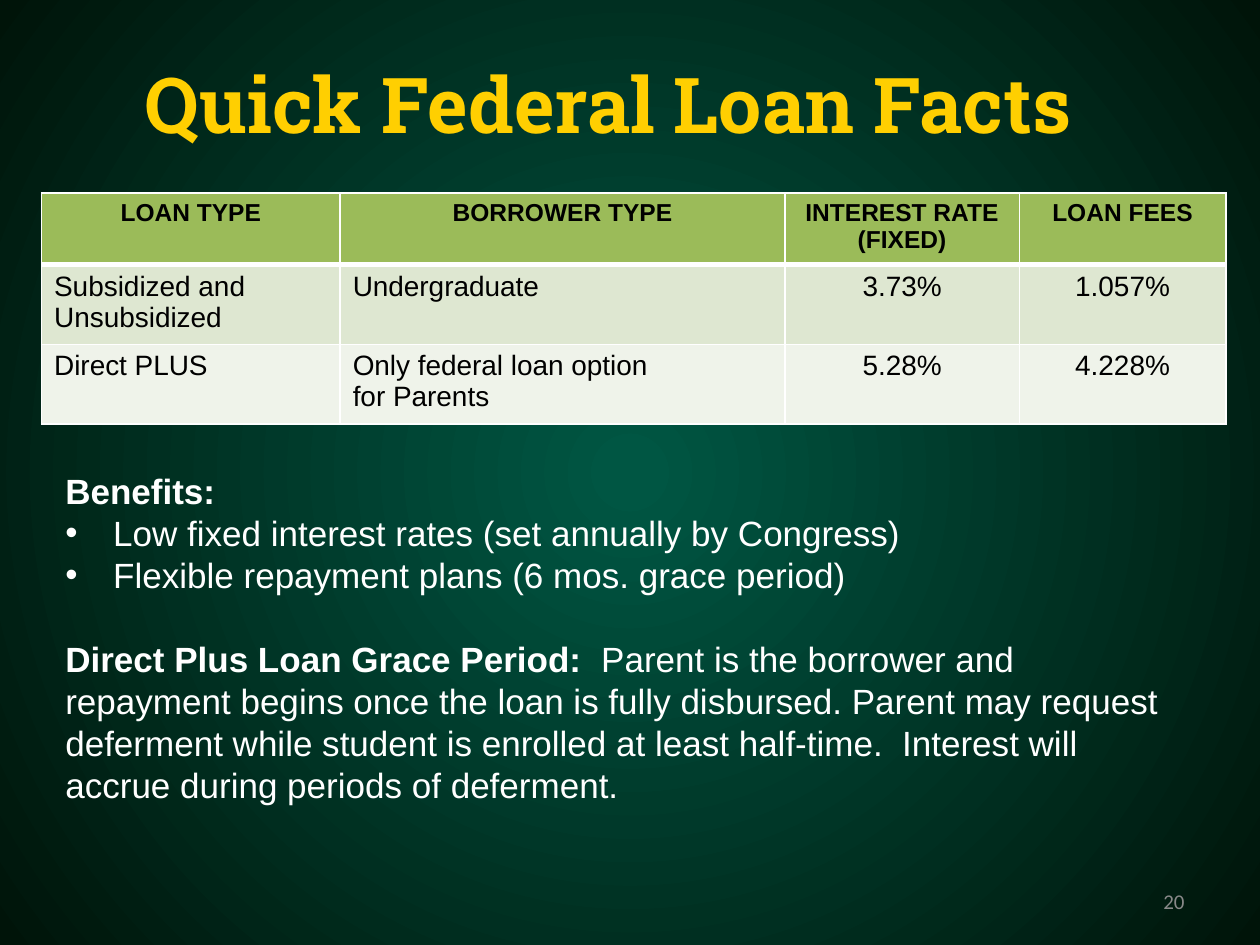
from dataclasses import dataclass

from lxml import etree
from pptx import Presentation
from pptx.dml.color import RGBColor
from pptx.enum.text import MSO_ANCHOR, PP_ALIGN
from pptx.oxml.ns import qn
from pptx.util import Inches, Pt

LEFT, CENTER, RIGHT = PP_ALIGN.LEFT, PP_ALIGN.CENTER, PP_ALIGN.RIGHT
TOP, MIDDLE = MSO_ANCHOR.TOP, MSO_ANCHOR.MIDDLE

GOLD = RGBColor(0xFF, 0xCF, 0x01)
WHITE = RGBColor(0xFF, 0xFF, 0xFF)
BLACK = RGBColor(0, 0, 0)
GRAY = RGBColor(0x89, 0x89, 0x89)
GLOW_GREEN = RGBColor(0x00, 0x56, 0x43)
DARK_GREEN = RGBColor(0x00, 0x14, 0x09)
HEADER_GREEN = RGBColor(0x9B, 0xBB, 0x59)
BAND_DARK = RGBColor(0xDE, 0xE7, 0xD1)
BAND_LIGHT = RGBColor(0xEF, 0xF3, 0xEA)

TITLE_FORMAT = {"name": "Roboto Slab", "size": Pt(44), "bold": True}
BODY_FORMAT = {"name": "Arial", "size": Pt(20)}
NUMBER_FORMAT = {"name": "Calibri", "size": Pt(12)}
HEADER_FORMAT = {"name": "Arial", "size": Pt(14), "bold": True}
CELL_FORMAT = {"name": "Arial", "size": Pt(16), "bold": False}


@dataclass
class LoanRow:
    cells: tuple[str, ...]
    height: float
    fill: RGBColor
    text_format: dict
    alignments: tuple
    top_border: float = 1
    bottom_border: float = 1


@dataclass
class Passage:
    lead: str = ""
    text: str = ""
    bullet: bool = False
    space_before: float = 0


COLUMN_WIDTHS = (2.37, 3.53, 1.86, 1.64)
BODY_ALIGNMENTS = (LEFT, LEFT, CENTER, CENTER)
LOAN_ROWS = (
    LoanRow(("LOAN TYPE", "BORROWER TYPE", "INTEREST RATE (FIXED)", "LOAN FEES"),
            0.57, HEADER_GREEN, HEADER_FORMAT, (CENTER,) * 4, bottom_border=3),
    LoanRow(("Subsidized and Unsubsidized", "Undergraduate", "3.73%", "1.057%"),
            0.63, BAND_DARK, CELL_FORMAT, BODY_ALIGNMENTS, top_border=3),
    LoanRow(("Direct PLUS", "Only federal loan option \vfor Parents", "5.28%", "4.228%"),
            0.63, BAND_LIGHT, CELL_FORMAT, BODY_ALIGNMENTS),
)
PASSAGES = (
    Passage(lead="Benefits:"),
    Passage(text="Low fixed interest rates (set annually by Congress)", bullet=True),
    Passage(text="Flexible repayment plans (6 mos. grace period)", bullet=True),
    Passage(
        lead="Direct Plus Loan Grace Period:",
        text="  Parent is the borrower and repayment begins once the loan is fully "
             "disbursed. Parent may request deferment while student is enrolled at "
             "least half-time.  Interest will accrue during periods of deferment.",
        space_before=24,
    ),
)


def format_span(span, text_format: dict, color: RGBColor) -> None:
    for attribute, value in text_format.items():
        setattr(span.font, attribute, value)
    span.font.color.rgb = color


def write_line(frame, text: str, text_format: dict, color: RGBColor, alignment, anchor) -> None:
    frame.word_wrap = True
    frame.vertical_anchor = anchor
    para = frame.paragraphs[0]
    para.text = text
    para.alignment = alignment
    for span in para.runs:
        format_span(span, text_format, color)


def paint_background(page) -> None:
    fill = page.background.fill
    fill.gradient()
    stops = ((0.02, GLOW_GREEN), (1, DARK_GREEN))
    for stop, (position, color) in zip(fill.gradient_stops, stops):
        stop.position = position
        stop.color.rgb = color
    # Turn the linear gradient into a circular one
    gradient = page.element.find(".//" + qn("a:gradFill"))
    gradient.remove(gradient.find(qn("a:lin")))
    circle = etree.SubElement(gradient, qn("a:path"), {"path": "circle"})
    sides = {side: "50000" for side in "ltrb"}
    etree.SubElement(circle, qn("a:fillToRect"), sides)


def add_borders(cell, row: LoanRow) -> None:
    properties = cell._tc.get_or_add_tcPr()
    widths = {"L": 1, "R": 1, "T": row.top_border, "B": row.bottom_border}
    for index, (side, width) in enumerate(widths.items()):
        line = etree.Element(qn("a:ln" + side), {"w": str(Pt(width))})
        solid = etree.SubElement(line, qn("a:solidFill"))
        etree.SubElement(solid, qn("a:srgbClr"), {"val": str(WHITE)})
        properties.insert(index, line)


def add_loan_table(page) -> None:
    height = sum(row.height for row in LOAN_ROWS)
    table = page.shapes.add_table(
        len(LOAN_ROWS), len(COLUMN_WIDTHS),
        Inches(0.33), Inches(1.53), Inches(sum(COLUMN_WIDTHS)), Inches(height),
    ).table
    for column, width in zip(table.columns, COLUMN_WIDTHS):
        column.width = Inches(width)
    for table_row, row in zip(table.rows, LOAN_ROWS):
        table_row.height = Inches(row.height)
        for cell, text, alignment in zip(table_row.cells, row.cells, row.alignments):
            cell.fill.solid()
            cell.fill.fore_color.rgb = row.fill
            write_line(cell.text_frame, text, row.text_format, BLACK, alignment, None)
            add_borders(cell, row)


def add_bullet(para) -> None:
    properties = para._p.get_or_add_pPr()
    properties.set("marL", str(Inches(0.38)))
    properties.set("indent", str(Inches(-0.38)))
    etree.SubElement(properties, qn("a:buFont"), {"typeface": "Arial"})
    etree.SubElement(properties, qn("a:buChar"), {"char": "•"})


def add_passages(page) -> None:
    box = page.shapes.add_textbox(Inches(0.42), Inches(3.68), Inches(9.08), Inches(3.47))
    frame = box.text_frame
    frame.word_wrap = True
    for index, passage in enumerate(PASSAGES):
        para = frame.add_paragraph() if index else frame.paragraphs[0]
        if passage.bullet:
            add_bullet(para)
        if passage.space_before:
            para.space_before = Pt(passage.space_before)
        for text, bold in ((passage.lead, True), (passage.text, False)):
            if text:
                span = para.add_run()
                span.text = text
                format_span(span, BODY_FORMAT | {"bold": bold}, WHITE)


def main() -> None:
    deck = Presentation()
    deck.slide_width, deck.slide_height = Inches(10), Inches(7.5)
    page = deck.slides.add_slide(deck.slide_layouts[5])
    paint_background(page)

    # Title
    title = page.shapes.title
    title.left, title.top = Inches(0.33), Inches(0.19)
    title.width, title.height = Inches(9), Inches(1.25)
    write_line(title.text_frame, "Quick Federal Loan Facts", TITLE_FORMAT, GOLD, CENTER, MIDDLE)

    # Slide number
    number = page.shapes.add_textbox(Inches(7.17), Inches(6.95), Inches(2.33), Inches(0.4))
    write_line(number.text_frame, "20", NUMBER_FORMAT, GRAY, RIGHT, MIDDLE)

    # Benefits, grace period and loan table
    add_passages(page)
    add_loan_table(page)
    deck.save("out.pptx")


if __name__ == "__main__":
    main()
